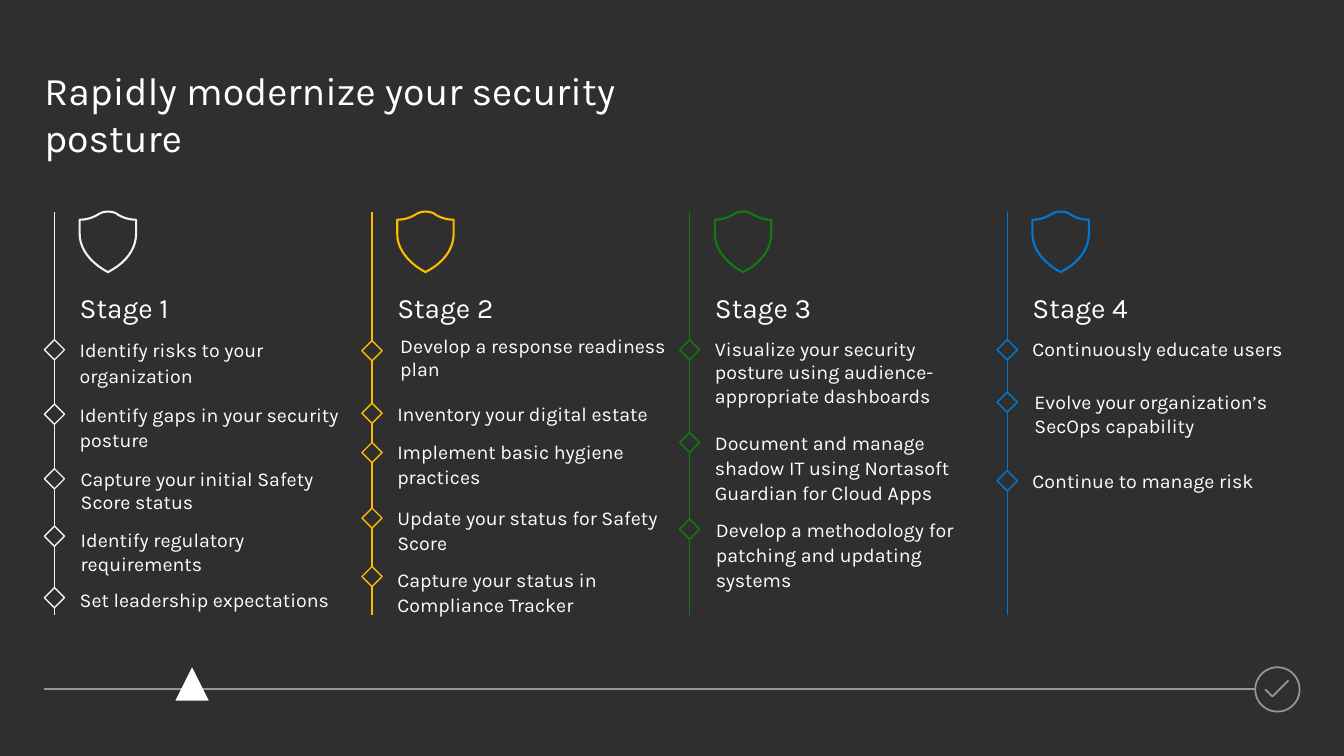
"""Build a slide of four security stages above a progress line."""
from dataclasses import dataclass

import pptx
import pptx.dml.color
import pptx.enum.shapes
import pptx.enum.text
import pptx.oxml
import pptx.util

Inches = pptx.util.Inches
Pt = pptx.util.Pt
KIND = pptx.enum.shapes.MSO_SHAPE


@dataclass(frozen=True)
class Theme:
    """Colours, font and type sizes of the slide."""
    back: str = "2F2F2F"
    text: str = "FFFFFF"
    pale: str = "F2F2F2"
    gold: str = "FFB900"
    green: str = "107C10"
    blue: str = "0078D4"
    grey: str = "969696"
    font: str = "Karla"
    title: int = 28
    head: int = 20
    body: int = 14


THEME = Theme()
TOP, FOOT, TRACK = 2.1, 6.1, 6.84
FIRST, PITCH, INDENT = 0.54, 3.15, 0.25
SHIELD = [
    ((0.56, 0.22), (0.56, 0.37), (0.46, 0.51), (0.28, 0.6)),
    ((0.28, 0.6), (0.11, 0.51), (0, 0.37), (0, 0.22)),
    ((0, 0.22), (0, 0.08), (0, 0.08), (0, 0.08)),
    ((0, 0.08), (0.07, 0.08), (0.13, 0.06), (0.18, 0.03)),
    ((0.18, 0.03), (0.21, 0.01), (0.24, 0), (0.28, 0)),
    ((0.28, 0), (0.32, 0), (0.36, 0.01), (0.38, 0.03)),
    ((0.38, 0.03), (0.43, 0.06), (0.49, 0.08), (0.56, 0.08)),
]

# Each item: diamond top, text top, lines, loose spacing, text, shift, width
STAGES = [
    (THEME.pale, [
        (3.37, 3.34, 2, True, "Identify risks to your organization"),
        (4.01, 3.98, 2, True, "Identify gaps in your security posture"),
        (4.65, 4.63, 2, False, "Capture your initial Safety Score status", 0.01),
        (5.22, 5.24, 2, False, "Identify regulatory requirements", 0.01),
        (5.83, 5.83, 1, False, "Set leadership expectations"),
    ]),
    (THEME.gold, [
        (3.38, 3.31, 2, False, "Develop a response readiness plan", 0.03, 2.8),
        (4, 3.97, 1, True, "Inventory your digital estate"),
        (4.39, 4.35, 2, True, "Implement basic hygiene practices"),
        (5.04, 5, 2, True, "Update your status for Safety Score"),
        (5.62, 5.62, 2, True, "Capture your status in Compliance Tracker"),
    ]),
    (THEME.green, [
        (3.37, 3.34, 3, False,
         "Visualize your security posture using audience-appropriate dashboards"),
        (4.29, 4.26, 3, True,
         "Document and manage shadow IT using Nortasoft Guardian for Cloud Apps"),
        (5.15, 5.12, 3, True,
         "Develop a methodology for patching and updating systems", 0.01),
    ]),
    (THEME.blue, [
        (3.37, 3.34, 1, False, "Continuously educate users", 0, 2.8),
        (3.89, 3.87, 2, False, "Evolve your organization’s SecOps capability", 0.02),
        (4.67, 4.65, 1, False, "Continue to manage risk"),
    ]),
]


def tint(code):
    """Return the colour of a hex code."""
    return pptx.dml.color.RGBColor.from_string(code)


def paint(shape, fill=None, line=None, width=1):
    """Set fill, line and shadow of a shape."""
    shape.shadow.inherit = False
    if fill:
        shape.fill.solid()
        shape.fill.fore_color.rgb = tint(fill)
    else:
        shape.fill.background()
    if line:
        shape.line.color.rgb = tint(line)
        shape.line.width = Pt(width)
    else:
        shape.line.fill.background()


def mark(slide, kind, x, y, size, **look):
    """Add a square preset shape."""
    shape = slide.shapes.add_shape(
        kind, Inches(x), Inches(y), Inches(size), Inches(size))
    paint(shape, **look)


def rule(slide, start, end, color, width):
    """Add a straight line."""
    line = slide.shapes.add_connector(
        pptx.enum.shapes.MSO_CONNECTOR.STRAIGHT,
        *(Inches(n) for n in (*start, *end)))
    line.line.color.rgb = tint(color)
    line.line.width = Pt(width)
    props = line._element.spPr
    props.append(pptx.oxml.parse_xml(
        '<a:effectLst xmlns:a='
        '"http://schemas.openxmlformats.org/drawingml/2006/main"/>'))


def label(slide, text, box, size, loose=False):
    """Add wrapped text without insets."""
    shape = slide.shapes.add_textbox(*(Inches(n) for n in box))
    frame = shape.text_frame
    frame.word_wrap = True
    frame.auto_size = pptx.enum.text.MSO_AUTO_SIZE.SHAPE_TO_FIT_TEXT
    frame.margin_left = frame.margin_right = 0
    frame.margin_top = frame.margin_bottom = 0
    para = frame.paragraphs[0]
    para.text = text
    para.font.name = THEME.font
    para.font.size = Pt(size)
    para.font.color.rgb = tint(THEME.text)
    if loose:
        para.line_spacing = 1.07
        para.space_before = Pt(4)
        para.space_after = Pt(5)


def trace(slide, dots, close, **look):
    """Add an outline through the given points."""
    spots = [(Inches(x), Inches(y)) for x, y in dots]
    pen = slide.shapes.build_freeform(*spots[0])
    pen.add_line_segments(spots[1:], close=close)
    paint(pen.convert_to_shape(), **look)


def bend(curve, steps=10):
    """Return points along a cubic curve."""
    dots = []
    for step in range(steps):
        t = step / steps
        parts = ((1 - t) ** 3, 3 * t * (1 - t) ** 2, 3 * t * t * (1 - t), t ** 3)
        dots.append(tuple(
            sum(part * spot[axis] for part, spot in zip(parts, curve))
            for axis in (0, 1)))
    return dots


def shield(slide, x, y, color):
    """Add a shield outline."""
    dots = [(x + dx, y + dy) for curve in SHIELD for dx, dy in bend(curve)]
    dots.append((x + 0.56, y + 0.08))
    trace(slide, dots, True, fill=THEME.back, line=color, width=1.5)


def item(slide, rail, color, top, y, lines, loose, text, shift=0, width=2.65):
    """Add a diamond on the rail and its text."""
    mark(slide, KIND.DIAMOND, rail - 0.1, top, 0.2, fill=THEME.back, line=color)
    box = (rail + INDENT + shift, y, width, lines * 0.24)
    label(slide, text, box, THEME.body, loose)


def stage(slide, index, color, items):
    """Add one stage column."""
    rail = FIRST + index * PITCH
    left = rail + INDENT
    rule(slide, (rail, TOP), (rail, FOOT), color, 1)
    shield(slide, left, TOP, color)
    label(slide, f"Stage {index + 1}", (left, 2.86, 2.65, 0.33), THEME.head, True)
    for entry in items:
        item(slide, rail, color, *entry)


def track(slide):
    """Add the progress line, its pointer and the final check."""
    rule(slide, (0.44, TRACK), (12.45, TRACK), THEME.grey, 1.5)
    mark(slide, KIND.ISOSCELES_TRIANGLE, 1.74, 6.62, 0.33, fill=THEME.text)
    mark(slide, KIND.OVAL, 12.45, 6.62, 0.44,
         fill=THEME.back, line=THEME.grey, width=1.25)
    trace(slide, [(12.55, 6.84), (12.62, 6.91), (12.78, 6.75)], False,
          line=THEME.grey, width=1.25)


def main():
    """Build and save the slide."""
    deck = pptx.Presentation()
    deck.slide_width, deck.slide_height = Inches(13.33), Inches(7.5)
    slide = deck.slides.add_slide(deck.slide_layouts[6])
    slide.background.fill.solid()
    slide.background.fill.fore_color.rgb = tint(THEME.back)
    label(slide, "Rapidly modernize your security posture",
          (0.44, 0.66, 6.42, 0.94), THEME.title)
    for index, (color, items) in enumerate(STAGES):
        stage(slide, index, color, items)
    track(slide)
    deck.save("out.pptx")


if __name__ == "__main__":
    main()
